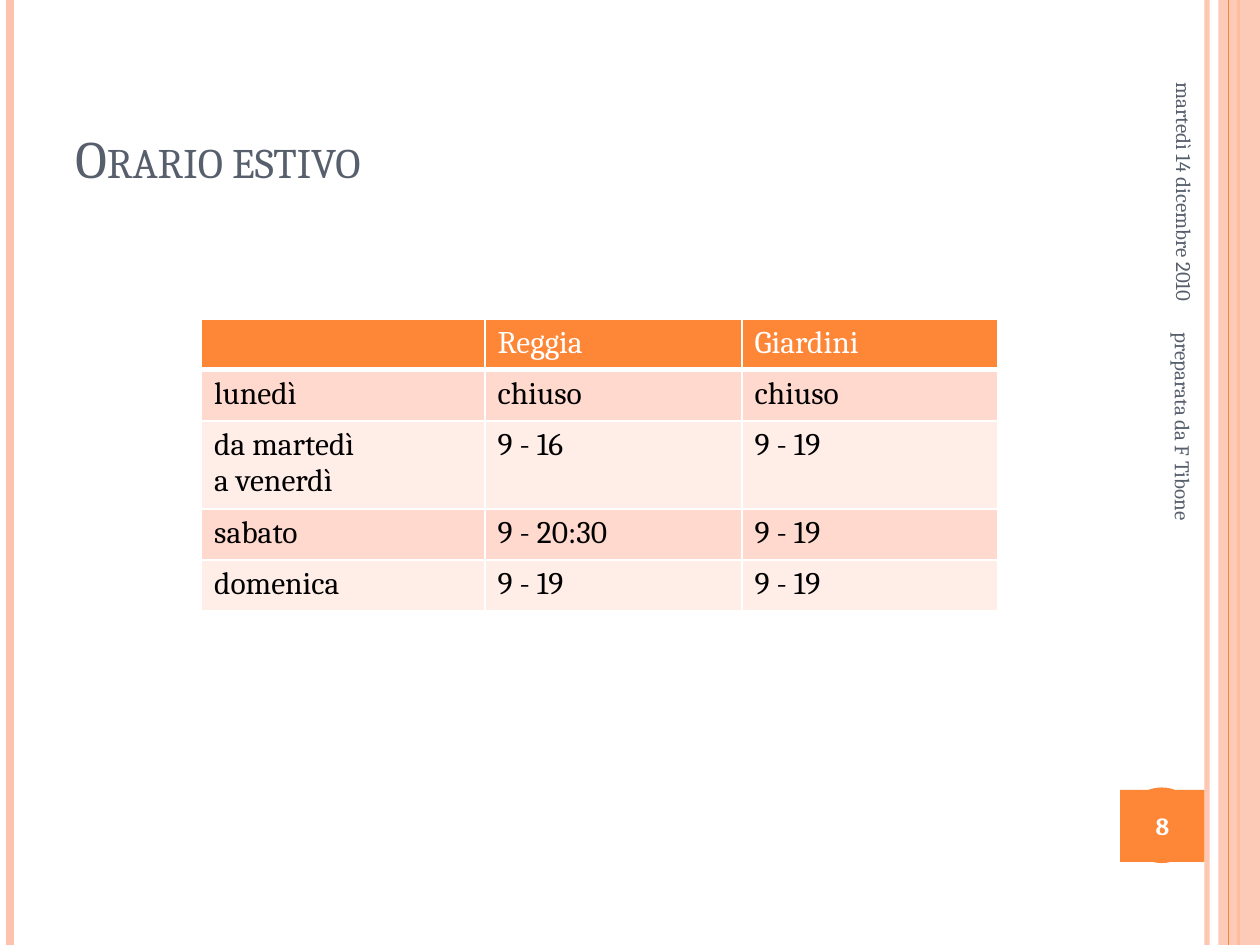
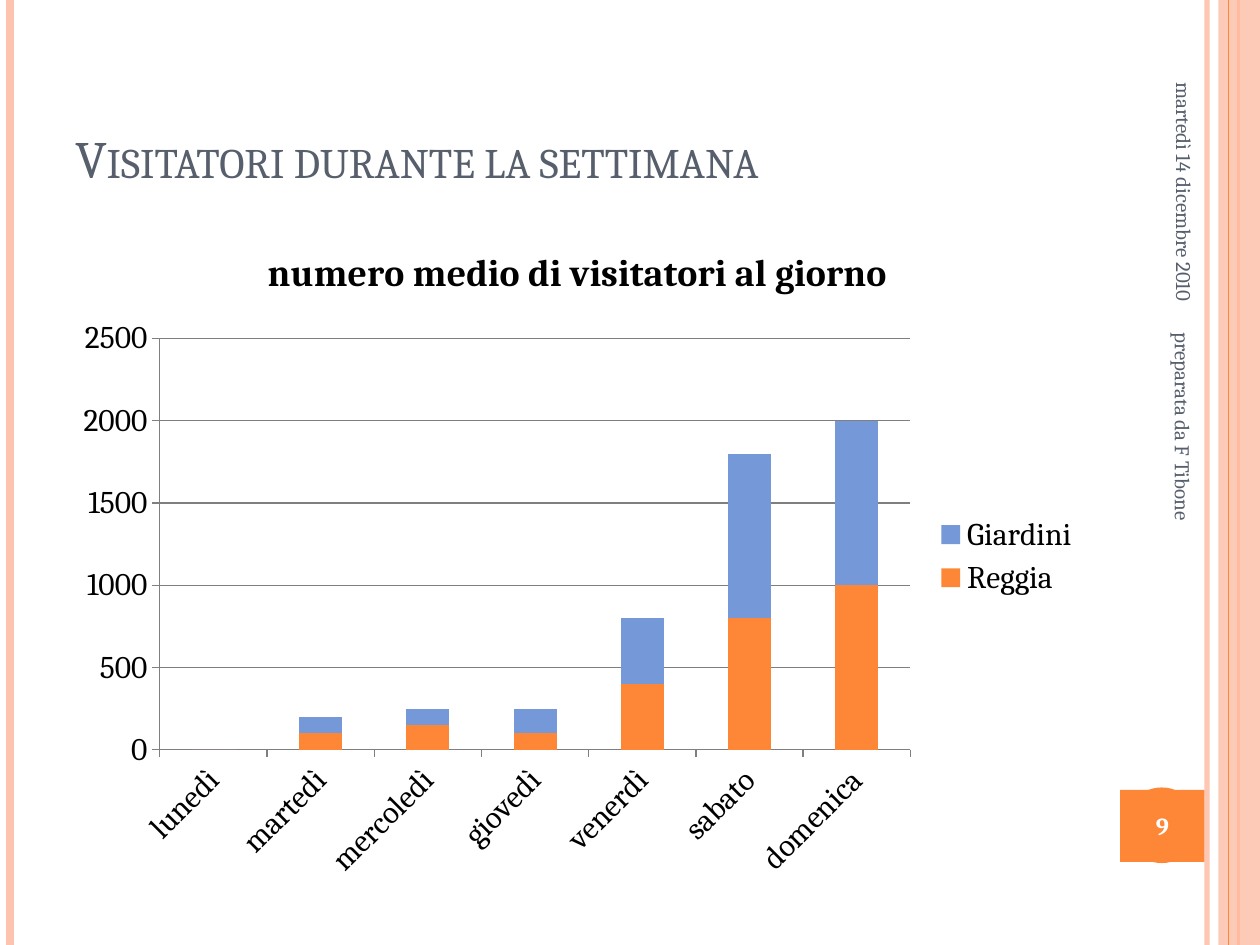
from dataclasses import dataclass

from lxml.etree import SubElement
from pptx import Presentation
from pptx.chart.data import CategoryChartData
from pptx.dml.color import RGBColor
from pptx.enum.chart import XL_CHART_TYPE as ChartType, XL_LEGEND_POSITION as LegendPos
from pptx.enum.chart import XL_TICK_MARK as Tick
from pptx.enum.shapes import MSO_CONNECTOR as Connector, MSO_SHAPE as Shape
from pptx.enum.text import MSO_ANCHOR as Anchor, PP_ALIGN as Align
from pptx.oxml.ns import qn
from pptx.util import Inches, Pt


@dataclass(frozen=True)
class Theme:
    font: str = "Cambria"
    white: str = "FFFFFF"
    black: str = "000000"
    slate: str = "575F6D"
    orange: str = "FE8637"
    peach: str = "FEC3AE"
    blue: str = "7598D9"
    grid: str = "7F7F7F"
    bands: tuple = ("FFD9CE", "FFEDE8")
    title: float = 30
    body: float = 18
    chart_title: float = 21.6
    number: float = 14
    footer: float = 12


COLS, ROWS = 100, 75  # grid of the 10 x 7.5 inch slide
DATE = "martedì 14 dicembre 2010"
AUTHOR = "preparata da F Tibone"


def set_alpha(parent, percent):
    """Make the solid colour inside parent partly transparent."""
    color = next(parent.iter(qn("a:srgbClr")))
    SubElement(color, qn("a:alpha"), val=str(percent * 1000))


class Deck:
    def __init__(self, theme):
        self.theme = theme
        self.prs = Presentation()
        self.prs.slide_width, self.prs.slide_height = Inches(10), Inches(7.5)
        self.slide = None

    # Grid and text style
    def x(self, col):
        return round(self.prs.slide_width * col / COLS)

    def y(self, row):
        return round(self.prs.slide_height * row / ROWS)

    def box(self, left, top, width, height):
        return self.x(left), self.y(top), self.x(width), self.y(height)

    def style(self, font, size, color, bold=False):
        font.name, font.size, font.bold = self.theme.font, Pt(size), bold
        font.color.rgb = RGBColor.from_string(color)

    def fill_text(self, tf, text, size, color, bold=False, align=Align.LEFT):
        tf.text = text
        for p in tf.paragraphs:
            p.alignment = align
            for r in p.runs:
                self.style(r.font, size, color, bold)

    # Basic elements
    def rule(self, col, color, width, alpha=None):
        line = self.slide.shapes.add_connector(
            Connector.STRAIGHT, self.x(col), 0, self.x(col), self.y(ROWS))
        line.line.color.rgb = RGBColor.from_string(color)
        line.line.width = Pt(width)
        sp_pr = line._element.spPr
        if alpha:
            set_alpha(sp_pr, alpha)
        SubElement(sp_pr, qn("a:effectLst"))

    def shape(self, kind, area, color, alpha=None):
        sp = self.slide.shapes.add_shape(kind, *self.box(*area))
        sp.shadow.inherit = False
        sp.fill.solid()
        sp.fill.fore_color.rgb = RGBColor.from_string(color)
        sp.line.fill.background()
        if alpha:
            set_alpha(sp._element.spPr, alpha)
        return sp

    def text(self, text, area, size, anchor=Anchor.MIDDLE, align=Align.LEFT, rotation=0):
        sp = self.slide.shapes.add_textbox(*self.box(*area))
        sp.rotation = rotation
        tf = sp.text_frame
        tf.word_wrap = True
        tf.vertical_anchor = anchor
        self.fill_text(tf, text, size, self.theme.slate, align=align)
        return sp

    # Shared parts of a slide
    def new_slide(self, title, number):
        t = self.theme
        self.slide = self.prs.slides.add_slide(self.prs.slide_layouts[6])
        self.rule(95.8, t.peach, 3, alpha=93)
        self.rule(0.8, t.peach, 4.5)
        self.rule(98.3, t.orange, 1.5)
        self.shape(Shape.RECTANGLE, (96.7, 0, 3.3, ROWS), t.peach, alpha=87)
        self.rule(97.5, t.orange, 0.75)
        self.shape(Shape.OVAL, (89.2, 62.5, 6, 6), t.orange)

        sp = self.text(title, (5, 3, 81.7, 12.5), t.title, Anchor.BOTTOM)
        for r in sp.text_frame.paragraphs[0].runs:
            r.font._element.set("cap", "small")

        self.text(DATE, (83, 11.8, 22, 4.2), t.footer, align=Align.RIGHT, rotation=90)
        self.text(AUTHOR, (76.4, 40.9, 35, 4), t.footer, rotation=90)
        badge = self.shape(Shape.RECTANGLE, (88.9, 62.7, 6.7, 5.7), t.orange)
        badge.text_frame.vertical_anchor = Anchor.MIDDLE
        self.fill_text(badge.text_frame, str(number), t.number, t.white, True, Align.CENTER)

    # Table
    def border(self, cell, widths):
        tc_pr = cell._tc.get_or_add_tcPr()
        for side, width in zip("LRTB", widths):
            ln = SubElement(tc_pr, qn(f"a:ln{side}"), w=str(Pt(width)))
            fill = SubElement(ln, qn("a:solidFill"))
            SubElement(fill, qn("a:srgbClr"), val=self.theme.white)

    def table(self, rows, left, top, widths, row_height):
        t = self.theme
        tbl = self.slide.shapes.add_table(
            len(rows), len(widths),
            *self.box(left, top, sum(widths), row_height * len(rows))).table
        for column, width in zip(tbl.columns, widths):
            column.width = self.x(width)
        for i, row in enumerate(rows):
            header = i == 0
            # each further line of text adds about two thirds of a row
            extra = max(text.count("\n") for text in row)
            tbl.rows[i].height = self.y(row_height * (1 + extra * 2 / 3))
            for j, text in enumerate(row):
                cell = tbl.cell(i, j)
                self.border(cell, (1, 1, 1, 3 if header else 1))
                cell.fill.solid()
                cell.fill.fore_color.rgb = RGBColor.from_string(
                    t.orange if header else t.bands[(i - 1) % 2])
                self.fill_text(cell.text_frame, text, t.body,
                               t.white if header else t.black)

    # Chart
    def stacked_columns(self, title, categories, series, area):
        t = self.theme
        data = CategoryChartData()
        data.categories = categories
        for name, values, _ in series:
            data.add_series(name, values)
        chart = self.slide.shapes.add_chart(
            ChartType.COLUMN_STACKED, *self.box(*area), data).chart
        self.style(chart.font, t.body, t.black)

        chart.has_title = True
        self.fill_text(chart.chart_title.text_frame, title, t.chart_title, t.black, True,
                       Align.CENTER)
        chart.chart_title.include_in_layout = False
        chart.has_legend = True
        chart.legend.position = LegendPos.RIGHT
        chart.legend.include_in_layout = False

        plot = chart.plots[0]
        plot.vary_by_categories = False
        plot.gap_width, plot.overlap = 150, 100
        for ser, (_, _, color) in zip(plot.series, series):
            ser.format.fill.solid()
            ser.format.fill.fore_color.rgb = RGBColor.from_string(color)

        cat, val = chart.category_axis, chart.value_axis
        val.has_major_gridlines = True
        val.minimum_scale, val.maximum_scale, val.major_unit = 0, 2500, 500
        for line in (cat.format.line, val.format.line, val.major_gridlines.format.line):
            line.color.rgb = RGBColor.from_string(t.grid)
            line.width = Pt(0.75)
        for axis in (cat, val):
            axis.major_tick_mark = Tick.OUTSIDE
            self.style(axis.tick_labels.font, t.body, t.black)
        cat._element.txPr.find(qn("a:bodyPr")).set("rot", str(-45 * 60000))


def main():
    theme = Theme()
    deck = Deck(theme)

    # Summer opening hours
    deck.new_slide("Orario estivo", 8)
    hours = [
        ("", "Reggia", "Giardini"),
        ("lunedì", "chiuso", "chiuso"),
        ("da martedì\na venerdì", "9 - 16", "9 - 19"),
        ("sabato", "9 - 20:30", "9 - 19"),
        ("domenica", "9 - 19", "9 - 19"),
    ]
    deck.table(hours, 16, 25.3, (22.5, 20.4, 20.3), 4.05)

    # Visitors through the week
    deck.new_slide("Visitatori durante la settimana", 9)
    days = ["lunedì", "martedì", "mercoledì", "giovedì", "venerdì", "sabato", "domenica"]
    visitors = [
        ("Reggia", (0, 100, 150, 100, 400, 800, 1000), theme.orange),
        ("Giardini", (0, 100, 100, 150, 400, 1000, 1000), theme.blue),
    ]
    deck.stacked_columns("numero medio di visitatori al giorno", days, visitors,
                         (5, 17.5, 81.7, 53.3))

    deck.prs.save("out.pptx")


if __name__ == "__main__":
    main()
